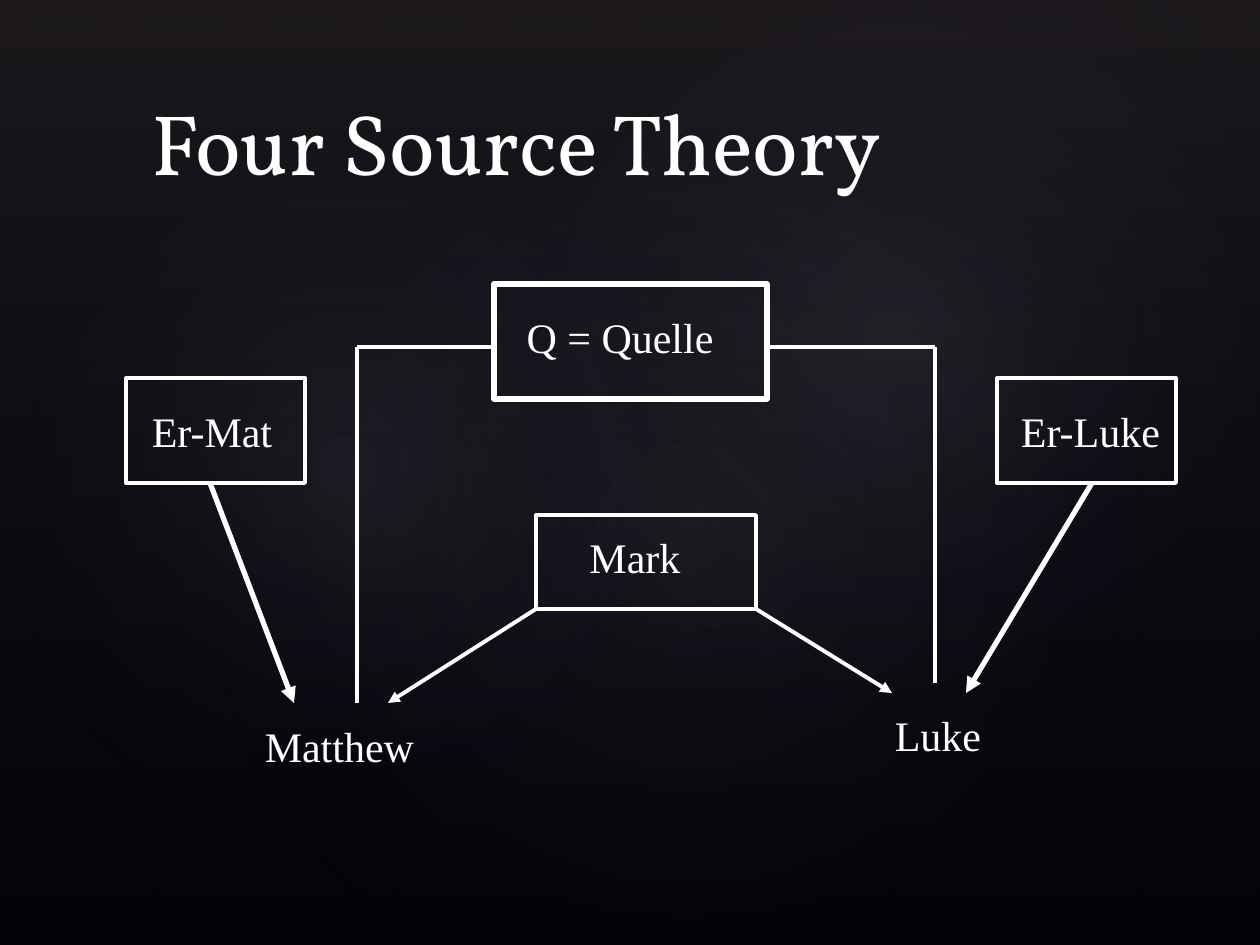
from lxml import etree
from pptx import Presentation, util as u
from pptx.dml.color import RGBColor
from pptx.enum import shapes, text
from pptx.oxml import parse_xml
from pptx.oxml.ns import nsdecls, qn

SCALE = 914400 / 126
COLORS = {"white": "FFFFFF", "black": "000000", "plum": "504652",
          "navy": "242852", "mist": "C4BCC6"}
LABEL = {"name": "Times New Roman", "size": u.Pt(24)}
TITLE = {"name": "Vollkorn", "size": u.Pt(49)}
LINEAR = '<a:lin ang="5400000" scaled="0"/>'
RADIAL = ('<a:path path="circle"><a:fillToRect l="50000" t="50000" '
          'r="50000" b="50000"/></a:path>')


def px(*lengths):
    """Turn pixel lengths into EMU."""
    return [u.Emu(round(length * SCALE)) for length in lengths]


def color(name):
    """Look up a palette colour."""
    return RGBColor.from_string(COLORS[name])


def style_line(item, width):
    """Give a shape or connector a white outline."""
    item.line.color.rgb = color("white")
    item.line.width = u.Pt(width)


def add_glow(page, kind, frame, stops, direction, rotation=0):
    """Add a borderless shape with a translucent gradient."""
    glow = page.shapes.add_shape(kind, *px(*frame))
    glow.shadow.inherit = False
    glow.rotation = rotation
    glow.line.fill.background()
    glow.fill.background()
    marks = "".join(
        f'<a:gs pos="{place * 1000}"><a:srgbClr val="{COLORS[name]}">'
        f'<a:alpha val="{alpha * 1000}"/></a:srgbClr></a:gs>'
        for place, name, alpha in stops)
    gradient = parse_xml(f'<a:gradFill {nsdecls("a")} rotWithShape="1">'
                         f'<a:gsLst>{marks}</a:gsLst>{direction}</a:gradFill>')
    properties = glow.element.spPr
    properties.replace(properties.find(qn("a:noFill")), gradient)


def add_text(page, words, frame, font, para_format, frame_format):
    """Add a text box holding one formatted paragraph."""
    box = page.shapes.add_textbox(*px(*frame))
    para = box.text_frame.paragraphs[0]
    span = para.add_run()
    span.text = words
    span.font.color.rgb = color("white")
    for target, values in ((box.text_frame, frame_format),
                           (para, para_format), (span.font, font)):
        for key, value in values.items():
            setattr(target, key, value)


def add_label(page, words, left, top, width):
    """Add a centred diagram label."""
    add_text(page, words, (left, top, width, 63), LABEL,
             {"alignment": text.PP_ALIGN.CENTER, "space_before": u.Pt(2.4)},
             {"word_wrap": False,
              "auto_size": text.MSO_AUTO_SIZE.SHAPE_TO_FIT_TEXT})


def add_source(page, frame, width):
    """Add the outlined rectangle of a source."""
    box = page.shapes.add_shape(shapes.MSO_SHAPE.RECTANGLE, *px(*frame))
    box.shadow.inherit = False
    box.fill.background()
    style_line(box, width)


def add_link(page, ends, width, arrow=False):
    """Add a straight line, with an arrowhead at its end if asked."""
    link = page.shapes.add_connector(shapes.MSO_CONNECTOR.STRAIGHT, *px(*ends))
    style_line(link, width)
    if arrow:
        etree.SubElement(link.line._get_or_add_ln(), qn("a:tailEnd"), type="triangle")
    etree.SubElement(link.element.spPr, qn("a:effectLst"))


def add_backdrop(page):
    """Paint the dark background and its soft glows."""
    page.background.fill.solid()
    page.background.fill.fore_color.rgb = color("black")
    add_glow(page, shapes.MSO_SHAPE.RECTANGLE, (0, 0, 1260, 945),
             [(0, "plum", 36), (100, "navy", 10)], LINEAR)
    for frame, rotation, alpha in (((189, 144, 998, 786), 328.7, 7),
                                   ((-38, 161, 764, 617), 294.3, 8),
                                   ((451, 16, 893, 655), 328.7, 8)):
        add_glow(page, shapes.MSO_SHAPE.OVAL, frame,
                 [(0, "mist", alpha), (58, "navy", 0)], RADIAL, rotation)


def main():
    """Build the slide and save it."""
    deck = Presentation()
    deck.slide_width, deck.slide_height = px(1260, 945)
    page = deck.slides.add_slide(deck.slide_layouts[6])
    add_backdrop(page)
    add_text(page, "Four Source Theory", (139, 73, 1040, 126), TITLE, {},
             {"word_wrap": True, "vertical_anchor": text.MSO_ANCHOR.BOTTOM})
    for frame, width in (((494, 284, 273, 115), 3),
                         ((536, 515, 220, 94), 2.25),
                         ((126, 378, 179, 105), 2.25),
                         ((997, 378, 179, 105), 2.25)):
        add_source(page, frame, width)
    for label in (("Q = Quelle", 514, 305, 212), ("Mark", 577, 525, 116),
                  ("Er-Mat", 139, 399, 146), ("Er-Luke", 1008, 399, 165),
                  ("Matthew", 252, 714, 175), ("Luke", 882, 703, 112)):
        add_label(page, *label)
    for ends in ((494, 347, 357, 347), (357, 347, 357, 703),
                 (767, 347, 935, 347), (935, 347, 935, 683)):
        add_link(page, ends, 2.25)
    for ends, width in (((536, 609, 388, 703), 2.25),
                        ((756, 609, 892, 693), 2.25),
                        ((210, 483, 294, 703), 3),
                        ((1092, 483, 966, 693), 3)):
        add_link(page, ends, width, arrow=True)
    deck.save("out.pptx")


if __name__ == "__main__":
    main()
